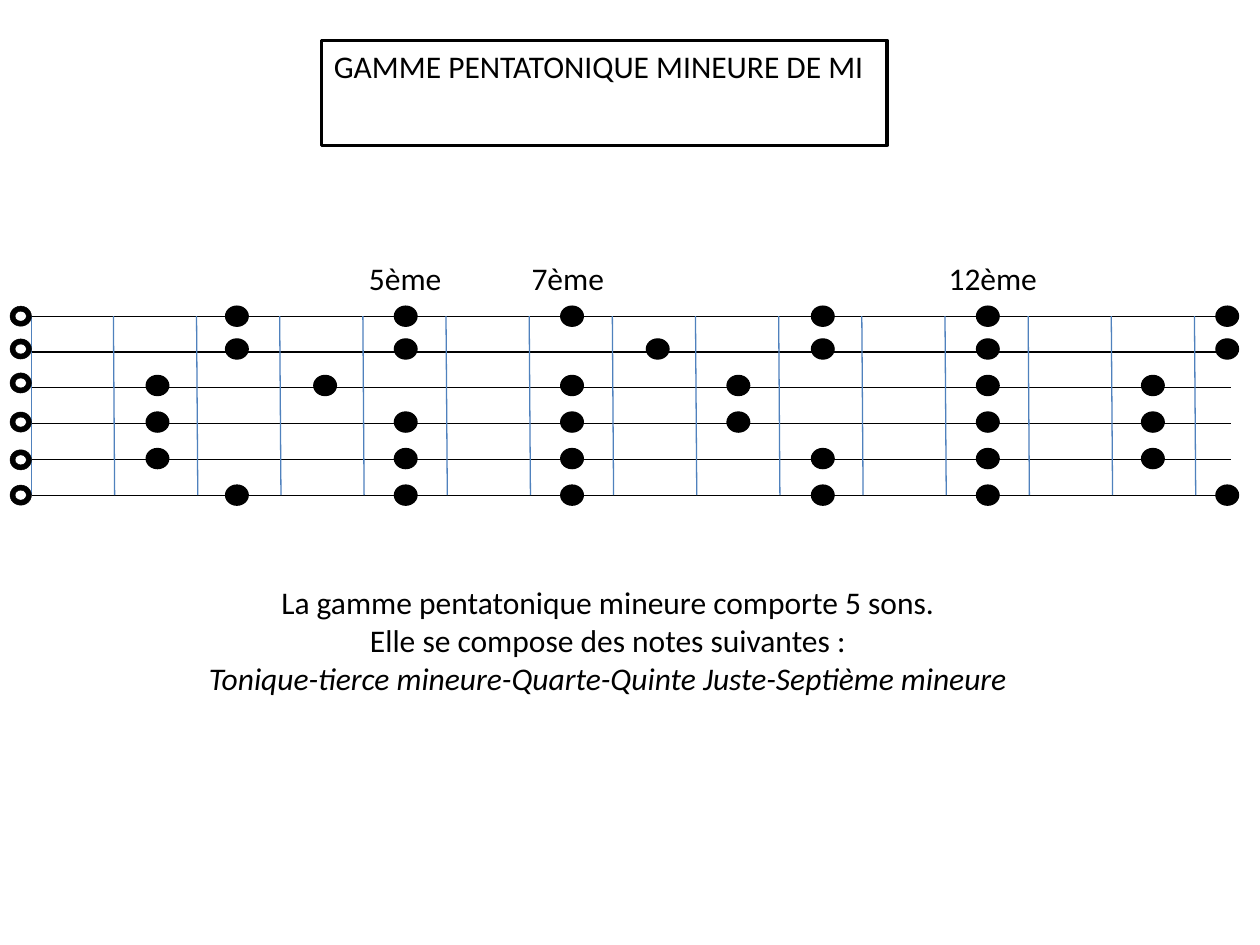
from lxml.etree import SubElement
from pptx import Presentation
from pptx.dml.color import RGBColor
from pptx.enum.shapes import MSO_CONNECTOR, MSO_SHAPE
from pptx.enum.text import MSO_ANCHOR, MSO_AUTO_SIZE, PP_ALIGN
from pptx.oxml.ns import qn
from pptx.util import Inches, Pt

COLORS = {"ink": "000000", "fret": "4F81BD", "paper": "FFFFFF"}
LEFT, RIGHT, TOP, LOW = 0.25, 9.77, 2.51, 3.93
STRINGS, FRETS, STEP, LEAN = 6, 15, 0.66, 0.01
ROWS = [2.43, 2.69, 2.98, 3.27, 3.56, 3.85]
OPEN_ROWS = [2.43, 2.69, 2.96, 3.27, 3.57, 3.85]
COLS = {2: 1.16, 3: 1.79, 4: 2.49, 5: 3.13, 7: 4.45, 8: 5.13,
        9: 5.77, 10: 6.44, 12: 7.75, 14: 9.06, 15: 9.65}
NOTES = [
    [3, 5, 7, 10, 12, 15],
    [3, 5, 8, 10, 12, 15],
    [2, 4, 7, 9, 12, 14],
    [2, 5, 7, 9, 12, 14],
    [2, 5, 7, 10, 12, 14],
    [3, 5, 7, 10, 12, 15],
]
MARKS = [("5ème", 2.83, 0.78), ("7ème", 4.12, 0.78), ("12ème", 7.43, 0.91)]
TITLE = "GAMME PENTATONIQUE MINEURE DE MI"
LINES = [
    "La gamme pentatonique mineure comporte 5 sons.",
    "Elle se compose des notes suivantes :",
    "Tonique-tierce mineure-Quarte-Quinte Juste-Septième mineure",
]


def color(name):
    return RGBColor.from_string(COLORS[name])


def place(shape, x, y, w, h):
    shape.left, shape.top = Inches(x), Inches(y)
    shape.width, shape.height = Inches(w), Inches(h)


def paint(shape, fill, width):
    shape.fill.solid()
    shape.fill.fore_color.rgb = color(fill)
    shape.line.color.rgb = color("ink")
    shape.line.width = Pt(width)


def write(frame, lines, align=PP_ALIGN.LEFT):
    frame.text = "\n".join(lines)
    frame.word_wrap = False
    frame.auto_size = MSO_AUTO_SIZE.SHAPE_TO_FIT_TEXT
    frame.vertical_anchor = MSO_ANCHOR.TOP
    for par in frame.paragraphs:
        par.alignment = align
        par.font.name = "Calibri"
        par.font.size = Pt(18)
        par.font.color.rgb = color("ink")


def add_line(slide, x1, y1, x2, y2, name):
    line = slide.shapes.add_connector(
        MSO_CONNECTOR.STRAIGHT, Inches(x1), Inches(y1), Inches(x2), Inches(y2))
    line.line.color.rgb = color(name)
    line.line.width = Pt(0.75)
    SubElement(line._element.spPr, qn("a:effectLst"))


def add_dot(slide, kind, x, y, w, width):
    dot = slide.shapes.add_shape(
        kind, Inches(x), Inches(y), Inches(w), Inches(0.16))
    dot.shadow.inherit = False
    paint(dot, "ink", width)


def add_text(slide, lines, x, y, w, h, align=PP_ALIGN.LEFT):
    box = slide.shapes.add_textbox(
        Inches(x), Inches(y), Inches(w), Inches(h))
    write(box.text_frame, lines, align)
    return box


def add_neck(slide):
    gap = (LOW - TOP) / (STRINGS - 1)
    for i in range(STRINGS):
        y = TOP + i * gap
        add_line(slide, LEFT, y, RIGHT, y, "ink")
    for i in range(FRETS):
        x = LEFT + i * STEP
        lean = LEAN if i else 0
        add_line(slide, x, LOW, x - lean, TOP, "fret")


def add_notes(slide):
    for y in OPEN_ROWS:
        add_dot(slide, MSO_SHAPE.DONUT, 0.08, y, 0.17, 0.25)
    for y, frets in zip(ROWS, NOTES):
        for fret in frets:
            add_dot(slide, MSO_SHAPE.OVAL, COLS[fret], y, 0.18, 0.75)


def add_title(slide):
    title = slide.shapes.title
    place(title, 2.55, 0.32, 4.49, 0.4)
    paint(title, "paper", 2)
    write(title.text_frame, [TITLE])


def main():
    deck = Presentation()
    deck.slide_width, deck.slide_height = Inches(10), Inches(7.5)
    slide = deck.slides.add_slide(deck.slide_layouts[5])
    add_neck(slide)
    add_notes(slide)
    add_title(slide)
    for text, x, w in MARKS:
        add_text(slide, [text], x, 2.01, w, 0.4)
    box = add_text(slide, LINES, 1.45, 4.58, 6.75, 1.01, PP_ALIGN.CENTER)
    box.text_frame.paragraphs[-1].font.italic = True
    deck.save("out.pptx")


if __name__ == "__main__":
    main()
